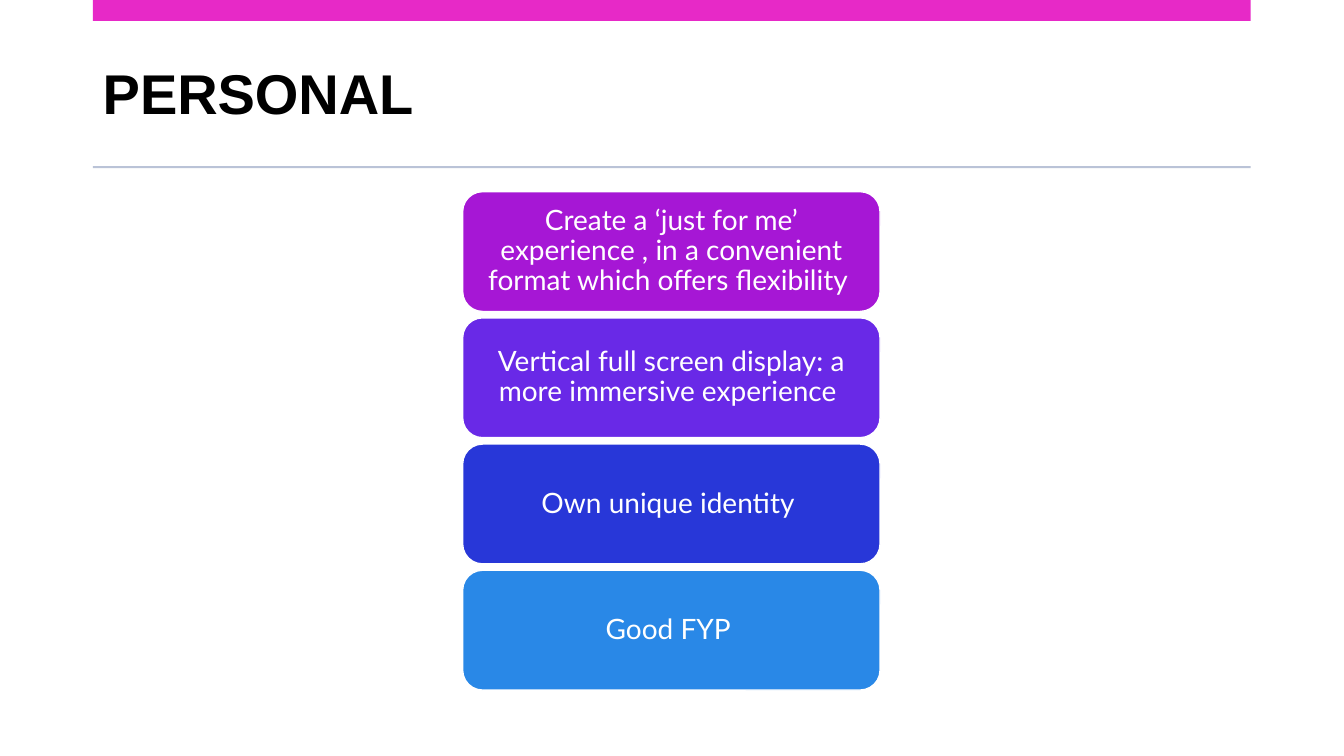
from pptx import Presentation
from pptx.dml.color import RGBColor
from pptx.enum.shapes import MSO_SHAPE as Kind
from pptx.enum.text import MSO_ANCHOR as Anchor, PP_ALIGN as Align
from pptx.util import Cm, Pt

BLACK = RGBColor(0x00, 0x00, 0x00)
WHITE = RGBColor(0xFF, 0xFF, 0xFF)
PINK = RGBColor(0xE7, 0x29, 0xC7)
GREY = RGBColor(0xBA, 0xC3, 0xD7)
PURPLE = RGBColor(0xA6, 0x17, 0xD5)
VIOLET = RGBColor(0x69, 0x29, 0xE7)
BLUE = RGBColor(0x28, 0x37, 0xD8)
SKY = RGBColor(0x29, 0x88, 0xE7)

# Shared margins of title and bars, in cm
LEFT, WIDTH = 2.34, 29.18

# Column of cards, in cm
CARD_LEFT, CARD_TOP = 11.66, 4.83
CARD_WIDTH, CARD_HEIGHT = 10.52, 3.02
CARD_STEP = 3.18

CARDS = [
    ("Create a ‘just for me’ experience , in a convenient format "
     "which offers flexibility ", PURPLE),
    ("Vertical full screen display: a more immersive experience ", VIOLET),
    ("Own unique identity ", BLUE),
    ("Good FYP ", SKY),
]


def add_block(slide, kind, left, top, width, height, fill):
    """Add a filled shape without line or shadow."""
    block = slide.shapes.add_shape(
        kind, Cm(left), Cm(top), Cm(width), Cm(height))
    block.shadow.inherit = False
    block.fill.solid()
    block.fill.fore_color.rgb = fill
    block.line.fill.background()
    return block


def set_text(frame, text, font, size, color, align, bold=False):
    """Write one paragraph, centred in height."""
    frame.word_wrap = True
    frame.vertical_anchor = Anchor.MIDDLE
    para = frame.paragraphs[0]
    para.text = text
    para.alignment = align
    para.line_spacing = 0.9
    para.font.name = font
    para.font.size = Pt(size)
    para.font.bold = bold
    para.font.color.rgb = color


def add_title(slide, text):
    box = slide.shapes.add_textbox(Cm(LEFT), Cm(0.94), Cm(WIDTH), Cm(3))
    set_text(box.text_frame, text, "Arial", 40, BLACK, Align.LEFT, True)


def add_card(slide, top, text, fill):
    card = add_block(slide, Kind.ROUNDED_RECTANGLE, CARD_LEFT, top,
                     CARD_WIDTH, CARD_HEIGHT, fill)
    card.line.color.rgb = WHITE
    card.line.width = Pt(1)
    frame = card.text_frame
    frame.margin_left = frame.margin_right = Cm(0.2)
    frame.margin_top = frame.margin_bottom = Cm(0.1)
    set_text(frame, text, "Lato", 20, WHITE, Align.CENTER)


def main():
    deck = Presentation()
    deck.slide_width, deck.slide_height = Cm(33.87), Cm(19.05)
    slide = deck.slides.add_slide(deck.slide_layouts[6])

    # Heading with the bar above and the rule below
    add_title(slide, "PERSONAL")
    add_block(slide, Kind.RECTANGLE, LEFT, 0, WIDTH, 0.53, PINK)
    add_block(slide, Kind.RECTANGLE, LEFT, 4.19, WIDTH, 0.05, GREY)

    # Stacked cards
    for row, (text, fill) in enumerate(CARDS):
        add_card(slide, CARD_TOP + row * CARD_STEP, text, fill)

    deck.save("out.pptx")


if __name__ == "__main__":
    main()
